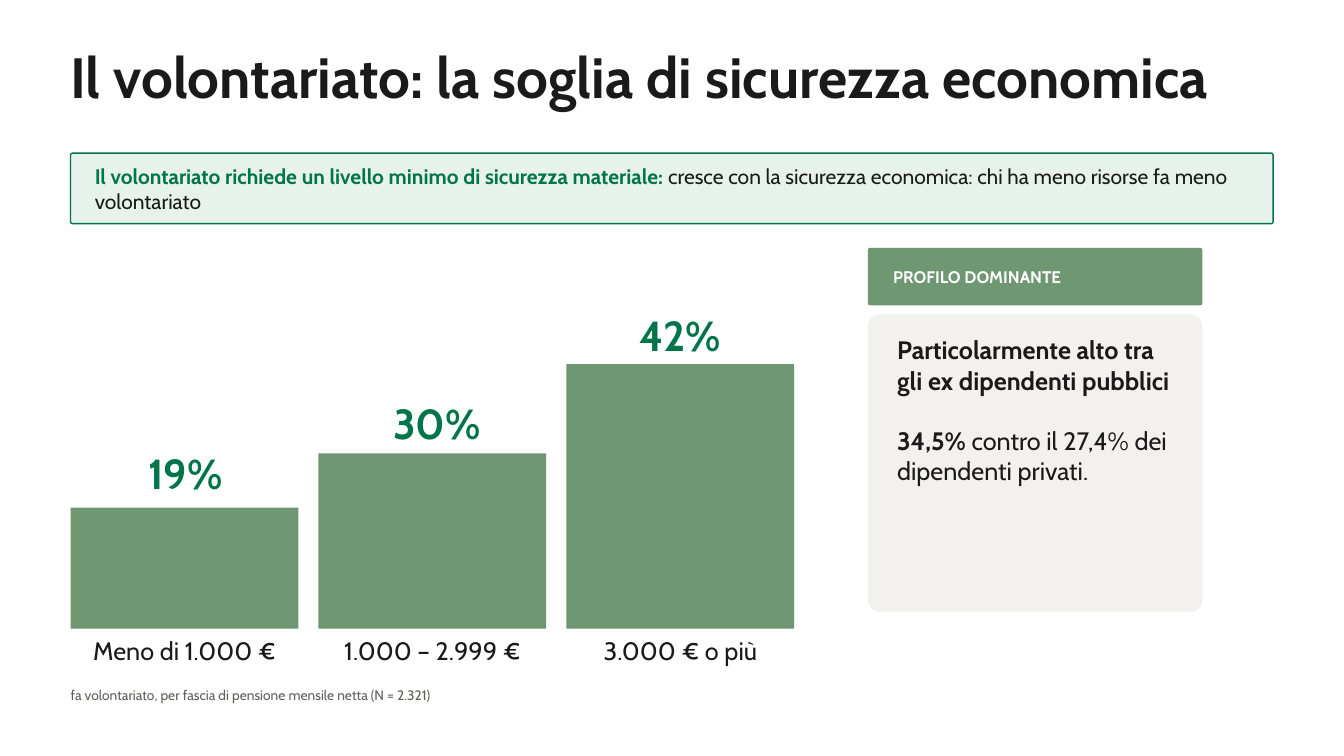
from pptx import Presentation
from pptx.dml.color import RGBColor
from pptx.enum import shapes, text
from pptx.util import Pt

INK = RGBColor(0x1A, 0x1A, 0x1A)
GREEN = RGBColor(0x00, 0x75, 0x4A)
SAGE = RGBColor(0x6F, 0x97, 0x72)
MINT = RGBColor(0xE7, 0xF2, 0xEC)
SAND = RGBColor(0xF2, 0xF1, 0xEE)
GREY = RGBColor(0x5F, 0x5E, 0x5A)
WHITE = RGBColor(0xFF, 0xFF, 0xFF)
LEFT, TOP, MIDDLE = text.PP_ALIGN.LEFT, text.MSO_ANCHOR.TOP, text.MSO_ANCHOR.MIDDLE
CENTER = text.PP_ALIGN.CENTER
RECT = shapes.MSO_SHAPE.RECTANGLE
ROUNDED = shapes.MSO_SHAPE.ROUNDED_RECTANGLE

deck = Presentation()
deck.slide_width, deck.slide_height = Pt(960), Pt(540)
slide = deck.slides.add_slide(deck.slide_layouts[5])


def write(box, paragraphs, size, align=LEFT, anchor=TOP, gap=0):
    """Fill a text shape; each paragraph is a list of (wording, colour, bold)."""
    frame = box.text_frame
    frame.word_wrap = True
    frame.auto_size = text.MSO_AUTO_SIZE.NONE
    frame.vertical_anchor = anchor
    frame.margin_left = frame.margin_top = frame.margin_right = frame.margin_bottom = 0
    for index, runs in enumerate(paragraphs):
        paragraph = frame.add_paragraph() if index else frame.paragraphs[0]
        paragraph.alignment = align
        if index:
            paragraph.space_before = Pt(gap)
        for wording, colour, bold in runs:
            run = paragraph.add_run()
            run.text = wording
            run.font.name = "Cabin"
            run.font.size = Pt(size)
            run.font.bold = bold
            run.font.color.rgb = colour


def add_panel(kind, left, top, width, height, fill, corner=None):
    panel = slide.shapes.add_shape(kind, Pt(left), Pt(top), Pt(width), Pt(height))
    panel.shadow.inherit = False
    panel.fill.solid()
    panel.fill.fore_color.rgb = fill
    panel.line.fill.background()
    if corner is not None:
        panel.adjustments[0] = corner
    return panel


# Title
title = slide.shapes.title
title.left, title.top, title.width, title.height = Pt(50.4), Pt(29.5), Pt(874.8), Pt(50.4)
write(title, [[("Il volontariato: la soglia di sicurezza economica", INK, True)]], 40.5)

# Key message
message_panel = add_panel(ROUNDED, 50.4, 109.4, 859, 50.4, MINT, 0.03)
message_panel.line.color.rgb = GREEN
message_panel.line.width = Pt(1)
message = slide.shapes.add_textbox(Pt(67.7), Pt(109.4), Pt(826.6), Pt(50.4))
write(message, [[
    ("Il volontariato richiede un livello minimo di sicurezza materiale: ", GREEN, True),
    ("cresce con la sicurezza economica: chi ha meno risorse fa meno volontariato", INK, False),
]], 15, anchor=MIDDLE)

# Bars: share, pension band, bar height, top of the share, shift of the share
BAR_LEFT, BAR_STEP, BAR_WIDTH, BASELINE = 50.4, 177.1, 162.7, 449.1
bars = [
    ("19%", "Meno di 1.000 €", 86.4, 319.7, 0.7),
    ("30%", "1.000 – 2.999 €", 125.3, 283.7, 3.2),
    ("42%", "3.000 € o più", 188.9, 221, 0),
]
for index, (share, band, height, share_top, shift) in enumerate(bars):
    left = BAR_LEFT + index * BAR_STEP
    add_panel(RECT, left, BASELINE - height, BAR_WIDTH, height, SAGE)
    share_label = slide.shapes.add_textbox(
        Pt(left + shift), Pt(share_top), Pt(BAR_WIDTH), Pt(36))
    write(share_label, [[(share, GREEN, True)]], 30, CENTER)
    band_label = slide.shapes.add_textbox(Pt(left - 8.6), Pt(453.6), Pt(180), Pt(32.4))
    write(band_label, [[(band, INK, False)]], 18, CENTER)

footnote = slide.shapes.add_textbox(Pt(50.4), Pt(490.3), Pt(531.4), Pt(23.8))
write(footnote, [[
    ("fa volontariato, per fascia di pensione mensile netta (N = 2.321)", GREY, False),
]], 9.8)

# Dominant profile
add_panel(ROUNDED, 619.9, 177.1, 239, 41, SAGE, 0.04)
profile_heading = slide.shapes.add_textbox(Pt(637.9), Pt(177.1), Pt(203.8), Pt(41))
write(profile_heading, [[("PROFILO DOMINANTE", WHITE, True)]], 12, anchor=MIDDLE)

add_panel(ROUNDED, 619.9, 224.6, 239, 212.4, SAND, 0.04)
profile = slide.shapes.add_textbox(Pt(640.8), Pt(239), Pt(198), Pt(94.3))
write(profile, [
    [("Particolarmente alto tra gli ex dipendenti pubblici", INK, True)],
    [("34,5%", INK, True), (" contro il 27,4% dei dipendenti privati.", INK, False)],
], 18, gap=21.7)

deck.save("out.pptx")
